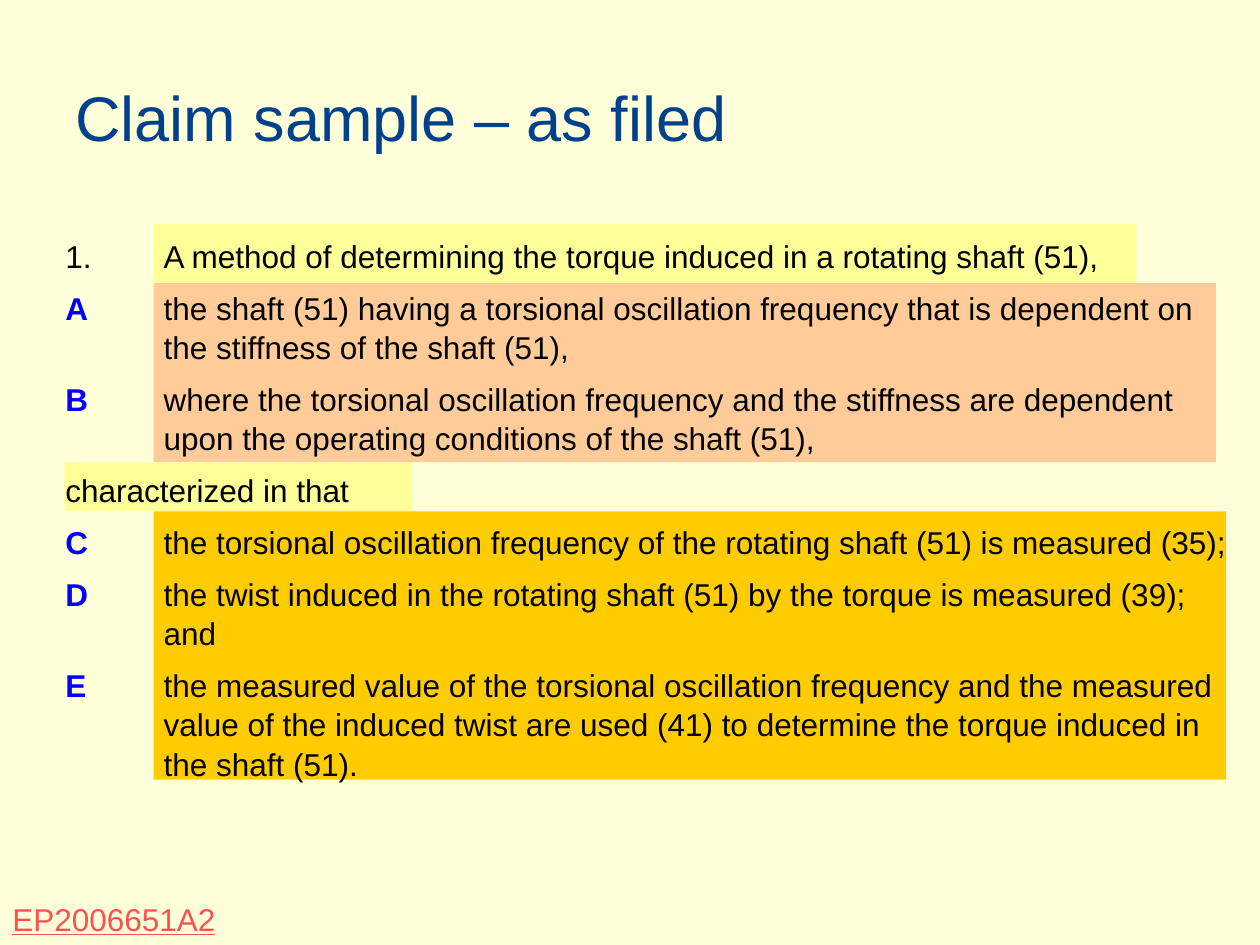
import dataclasses

import pptx
import pptx.dml.color
import pptx.enum.shapes
import pptx.enum.text
import pptx.util

Cm = pptx.util.Cm
Pt = pptx.util.Pt
Anchor = pptx.enum.text.MSO_ANCHOR


@dataclasses.dataclass(frozen=True)
class Theme:
    font: str = "Arial"
    title_size: float = 36
    body_size: float = 18
    background: str = "FFFFD9"
    title: str = "00408C"
    body: str = "000000"
    letter: str = "0000FF"
    reference: str = "FF5050"
    preamble: str = "FFFF99"
    known: str = "FFCC99"
    novel: str = "FFCC00"


def color(value):
    return pptx.dml.color.RGBColor.from_string(value)


def apply(target, values):
    for name, value in values.items():
        setattr(target, name, value)


class ClaimSlide:
    def __init__(self, deck, theme):
        self.theme = theme
        self.page = deck.slides.add_slide(deck.slide_layouts[6])
        fill = self.page.background.fill
        fill.solid()
        fill.fore_color.rgb = color(theme.background)

    def band(self, left, top, width, height, fill_color):
        box = self.page.shapes.add_shape(
            pptx.enum.shapes.MSO_SHAPE.RECTANGLE,
            Cm(left), Cm(top), Cm(width), Cm(height))
        box.shadow.inherit = False
        box.fill.solid()
        box.fill.fore_color.rgb = color(fill_color)
        box.line.fill.background()

    def frame(self, left, top, width, height, **values):
        box = self.page.shapes.add_textbox(Cm(left), Cm(top), Cm(width), Cm(height))
        apply(box.text_frame, {"word_wrap": True, **values})
        return box.text_frame

    def span(self, para, text, text_color, **values):
        span = para.add_run()
        span.text = text
        base = {"name": self.theme.font, "size": Pt(self.theme.body_size)}
        apply(span.font, {**base, **values})
        span.font.color.rgb = color(text_color)

    def label(self, place, text, text_color, anchor=Anchor.TOP, **values):
        frame = self.frame(*place, vertical_anchor=anchor)
        self.span(frame.paragraphs[0], text, text_color, **values)

    def claim(self, place, features, indent):
        frame = self.frame(*place)
        for index, (marker, text) in enumerate(features):
            para = frame.paragraphs[0] if index == 0 else frame.add_paragraph()
            properties = para._p.get_or_add_pPr()
            for name, value in {"marL": Cm(indent), "indent": -Cm(indent)}.items():
                properties.set(name, str(int(value)))
            space = 0.4 * self.theme.body_size if index else 0
            apply(para, {"space_before": Pt(space), "line_spacing": 1.04})
            if marker.isalpha():
                self.span(para, marker, self.theme.letter, bold=True)
                text = "\t" + text
            elif marker:
                text = marker + "\t" + text
            self.span(para, text, self.theme.body)


FEATURES = [
    ("1.", "A method of determining the torque induced in a rotating shaft (51),"),
    ("A", "the shaft (51) having a torsional oscillation frequency that is dependent on "
          "the stiffness of the shaft (51),"),
    ("B", "where the torsional oscillation frequency and the stiffness are dependent "
          "upon the operating conditions of the shaft (51),"),
    ("", "characterized in that"),
    ("C", "the torsional oscillation frequency of the rotating shaft (51) is measured (35);"),
    ("D", "the twist induced in the rotating shaft (51) by the torque is measured (39); and"),
    ("E", "the measured value of the torsional oscillation frequency and the measured "
          "value of the induced twist are used (41) to determine the torque induced in "
          "the shaft (51)."),
]


def main():
    deck = pptx.Presentation()
    apply(deck, {"slide_width": Cm(25.4), "slide_height": Cm(19.05)})
    theme = Theme()
    slide = ClaimSlide(deck, theme)

    text_left, margin_left = 3.1, 1.3
    top = 4.52
    for left, width, height, fill_color in [
        (text_left, 19.81, 1.19, theme.preamble),
        (text_left, 21.41, 3.61, theme.known),
        (margin_left, 7.01, 0.99, theme.preamble),
        (text_left, 21.62, 5.41, theme.novel),
    ]:
        slide.band(left, top, width, height, fill_color)
        top += height

    slide.claim((1.07, 4.62, 24.13, 12.09), FEATURES, indent=1.98)
    slide.label((1.27, 0.76, 22.86, 3.18), "Claim sample – as filed", theme.title,
                Anchor.MIDDLE, size=Pt(theme.title_size))
    slide.label((0, 18.01, 6.6, 1.02), "EP2006651A2", theme.reference, underline=True)

    deck.save("out.pptx")


if __name__ == "__main__":
    main()
